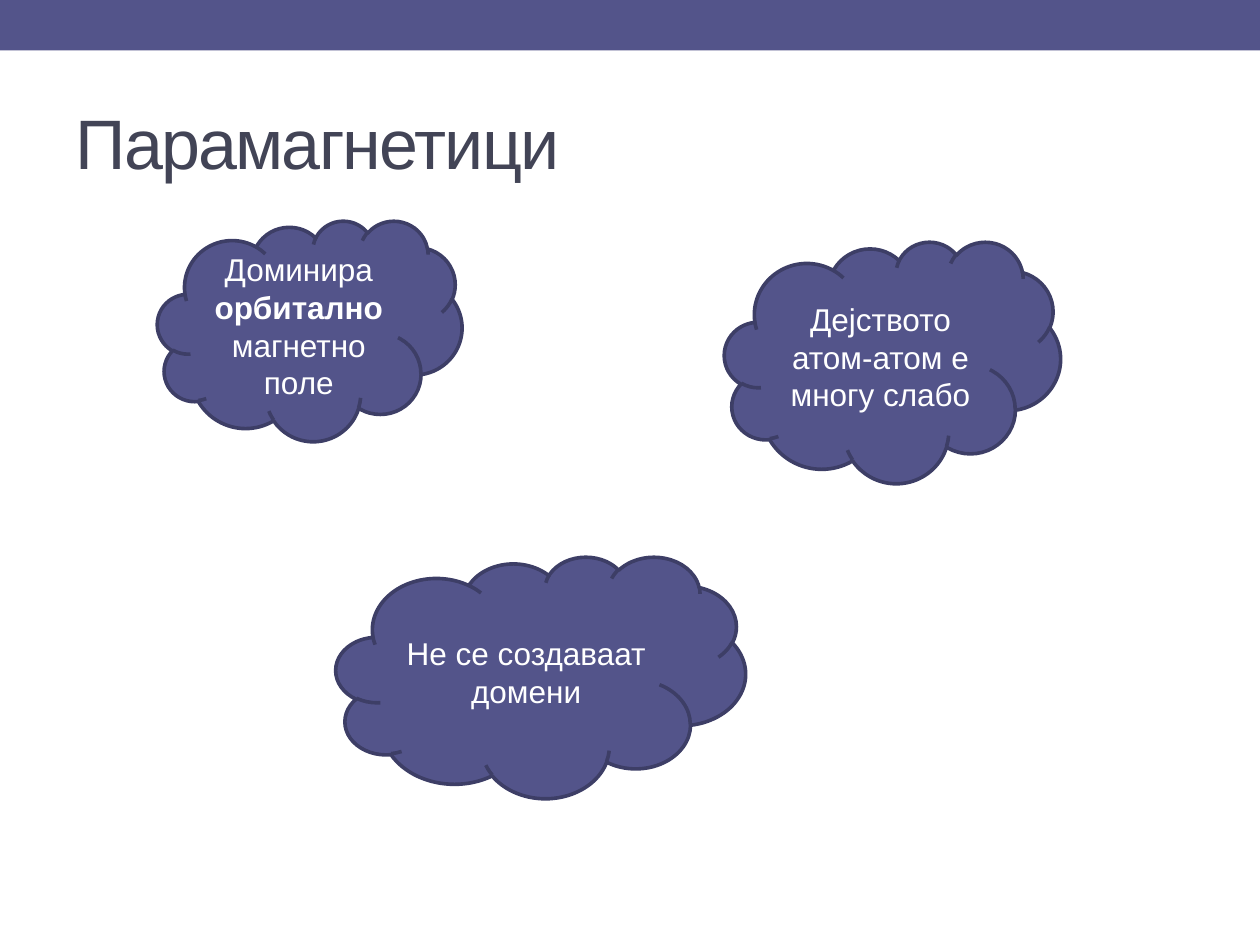
from dataclasses import dataclass

from pptx import Presentation
from pptx.dml.color import RGBColor
from pptx.enum.shapes import MSO_SHAPE
from pptx.enum.text import MSO_ANCHOR, PP_ALIGN
from pptx.util import Pt

RECTANGLE, CLOUD = MSO_SHAPE.RECTANGLE, MSO_SHAPE.CLOUD
MIDDLE = MSO_ANCHOR.MIDDLE
LEFT, CENTER = PP_ALIGN.LEFT, PP_ALIGN.CENTER
EMU_PER_PX = 7620
TITLE_ONLY = 5


def px(length):
    return length * EMU_PER_PX


@dataclass(frozen=True)
class Theme:
    font: str = "Arial"
    accent: str = "53548A"
    outline: str = "3D3E66"
    title_color: str = "424456"
    cloud_text: str = "FFFFFF"
    title_size: int = 40
    cloud_size: int = 18
    outline_width: float = 2.08
    title_spacing: int = -100


class SlideBuilder:
    def __init__(self, slide, theme):
        self.slide = slide
        self.theme = theme

    def style(self, para, size, color, align):
        para.alignment = align
        para.font.name = self.theme.font
        para.font.size = Pt(size)
        para.font.color.rgb = RGBColor.from_string(color)

    def shape(self, kind, left, top, width, height):
        shape = self.slide.shapes.add_shape(kind, px(left), px(top), px(width), px(height))
        shape.shadow.inherit = False
        shape.fill.solid()
        shape.fill.fore_color.rgb = RGBColor.from_string(self.theme.accent)
        return shape

    def bar(self, left, top, width, height):
        self.shape(RECTANGLE, left, top, width, height).line.fill.background()

    def title(self, text, left, top, width, height):
        title = self.slide.shapes.title
        title.left, title.top = px(left), px(top)
        title.width, title.height = px(width), px(height)
        title.text_frame.vertical_anchor = MIDDLE
        para = title.text_frame.paragraphs[0]
        self.style(para, self.theme.title_size, self.theme.title_color, LEFT)
        span = para.add_run()
        span.text = text
        span.font._element.set("spc", str(self.theme.title_spacing))

    def cloud(self, spans, left, top, width, height):
        cloud = self.shape(CLOUD, left, top, width, height)
        cloud.line.color.rgb = RGBColor.from_string(self.theme.outline)
        cloud.line.width = Pt(self.theme.outline_width)
        cloud.text_frame.word_wrap = True
        cloud.text_frame.vertical_anchor = MIDDLE
        para = cloud.text_frame.paragraphs[0]
        self.style(para, self.theme.cloud_size, self.theme.cloud_text, CENTER)
        for text, bold in spans:
            span = para.add_run()
            span.text = text
            span.font.bold = bold


def main():
    deck = Presentation()
    deck.slide_width, deck.slide_height = px(1200), px(900)
    page = SlideBuilder(deck.slides.add_slide(deck.slide_layouts[TITLE_ONLY]), Theme())
    page.bar(0, 0, 1200, 48)
    page.title("Парамагнетици", 60, 70, 1080, 130)
    orbital = [("Доминира ", False), ("орбитално ", True), ("магнетно поле", False)]
    page.cloud(orbital, 150, 210, 290, 210)
    page.cloud([("Дејството атом-атом е многу слабо", False)], 690, 230, 320, 230)
    page.cloud([("Не се создаваат домени", False)], 320, 530, 390, 230)
    deck.save("out.pptx")


if __name__ == "__main__":
    main()
